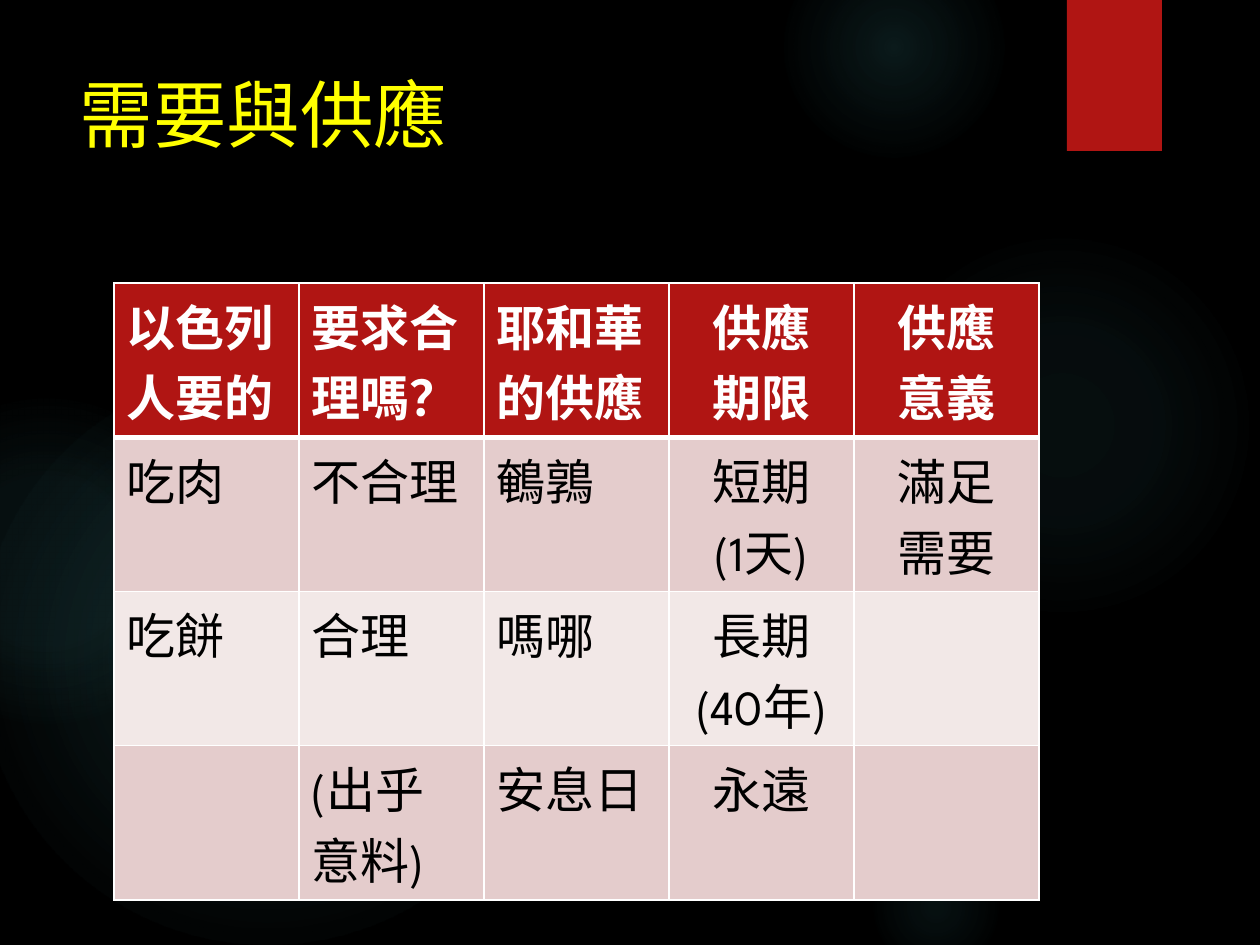
from dataclasses import dataclass

from lxml import etree
from pptx import Presentation
from pptx.dml.color import RGBColor
from pptx.enum.shapes import MSO_SHAPE
from pptx.enum.text import MSO_ANCHOR, MSO_AUTO_SIZE, PP_ALIGN
from pptx.oxml.ns import qn
from pptx.util import Emu, Pt

OVAL, RECT = MSO_SHAPE.OVAL, MSO_SHAPE.RECTANGLE
LEFT, CENTER = PP_ALIGN.LEFT, PP_ALIGN.CENTER
TOP = MSO_ANCHOR.TOP
NO_FIT = MSO_AUTO_SIZE.NONE

SCALE = 914400 / 126
FONT = "League Spartan"
COLORS = {
    "bg": "000000",
    "glow": "50B9C1",
    "accent": "B01513",
    "title": "FFFF00",
    "head": "FFFFFF",
    "body": "000000",
    "border": "FFFFFF",
    "odd": "E4CCCC",
    "even": "F2E8E7",
}


@dataclass
class Glow:
    x: int
    y: int
    size: int
    stops: tuple


GLOWS = [
    Glow(868, 231, 388, ((0, 7), (36, 6), (69, 0))),
    Glow(784, -63, 220, ((0, 14), (36, 7), (73, 0))),
    Glow(868, 840, 136, ((0, 9), (36, 5), (66, 0))),
    Glow(-21, 368, 577, ((0, 11), (36, 10), (75, 0))),
    Glow(-116, 399, 325, ((0, 8), (36, 8), (72, 0))),
]

ROWS = [
    ["以色列人要的", "要求合理嗎？", "耶和華的供應", "供應\n期限", "供應\n意義"],
    ["吃肉", "不合理", "鵪鶉", "短期\n(1天)", "滿足\n需要"],
    ["吃餅", "合理", "嗎哪", "長期\n(40年)", ""],
    ["", "(出乎\n意料)", "安息日", "永遠", ""],
]
FIRST_CENTERED = 3
COL_W, ROW_H = 185, 144


def px(n: int) -> Emu:
    return Emu(round(n * SCALE))


def rgb(name: str) -> RGBColor:
    return RGBColor.from_string(COLORS[name])


def write(tf, text: str, *, size: int, color: str, bold: bool = False, align=LEFT) -> None:
    for i, line in enumerate(text.split("\n")):
        p = tf.paragraphs[0] if i == 0 else tf.add_paragraph()
        p.alignment = align
        r = p.add_run()
        r.text = line
        r.font.name = FONT
        r.font.size = Pt(size)
        r.font.bold = bold
        r.font.color.rgb = rgb(color)


def add_shape(s, kind, x: int, y: int, w: int, h: int):
    sp = s.shapes.add_shape(kind, px(x), px(y), px(w), px(h))
    sp.shadow.inherit = False
    sp.line.fill.background()
    return sp


def add_glow(s, glow: Glow) -> None:
    sp = add_shape(s, OVAL, glow.x, glow.y, glow.size, glow.size)
    sp.fill.gradient()
    grad = sp.fill._xPr.find(qn("a:gradFill"))
    for child in list(grad):
        grad.remove(child)
    stops = etree.SubElement(grad, qn("a:gsLst"))
    for pos, alpha in glow.stops:
        gs = etree.SubElement(stops, qn("a:gs"), pos=str(pos * 1000))
        clr = etree.SubElement(gs, qn("a:srgbClr"), val=COLORS["glow"])
        etree.SubElement(clr, qn("a:alpha"), val=str(alpha * 1000))
    circle = etree.SubElement(grad, qn("a:path"), path="circle")
    etree.SubElement(circle, qn("a:fillToRect"), l="50000", t="50000", r="50000", b="50000")


def set_borders(cell, top: int, bottom: int) -> None:
    tcPr = cell._tc.get_or_add_tcPr()
    for side, width in (("L", 1), ("R", 1), ("T", top), ("B", bottom)):
        ln = etree.SubElement(tcPr, qn(f"a:ln{side}"), w=str(Pt(width)))
        fill = etree.SubElement(ln, qn("a:solidFill"))
        etree.SubElement(fill, qn("a:srgbClr"), val=COLORS["border"])


def add_grid(s, x: int, y: int) -> None:
    n_rows, n_cols = len(ROWS), len(ROWS[0])
    frame = s.shapes.add_table(n_rows, n_cols, px(x), px(y), px(COL_W * n_cols), px(ROW_H * n_rows))
    table = frame.table
    for col in table.columns:
        col.width = px(COL_W)
    for i, texts in enumerate(ROWS):
        table.rows[i].height = px(ROW_H)
        head = i == 0
        fill = "accent" if head else "odd" if i % 2 else "even"
        for j, text in enumerate(texts):
            cell = table.cell(i, j)
            set_borders(cell, top=3 if i == 1 else 1, bottom=3 if head else 1)
            cell.fill.solid()
            cell.fill.fore_color.rgb = rgb(fill)
            if text:
                write(cell.text_frame, text, size=28, color="head" if head else "body",
                      bold=head, align=CENTER if j >= FIRST_CENTERED else LEFT)


def set_title(s, text: str) -> None:
    sp = s.shapes.title
    sp.left, sp.top, sp.width, sp.height = px(67), px(63), px(973), px(193)
    s.shapes._spTree.append(sp._element)
    tf = sp.text_frame
    tf.word_wrap = True
    tf.auto_size = NO_FIT
    tf.vertical_anchor = TOP
    write(tf, text, size=42, color="title")


def main() -> None:
    prs = Presentation()
    prs.slide_width, prs.slide_height = px(1260), px(945)
    s = prs.slides.add_slide(prs.slide_layouts[5])
    s.background.fill.solid()
    s.background.fill.fore_color.rgb = rgb("bg")
    for glow in GLOWS:
        add_glow(s, glow)
    tab = add_shape(s, RECT, 1067, 0, 95, 151)
    tab.fill.solid()
    tab.fill.fore_color.rgb = rgb("accent")
    set_title(s, "需要與供應")
    add_grid(s, 114, 283)
    prs.save("out.pptx")


if __name__ == "__main__":
    main()
